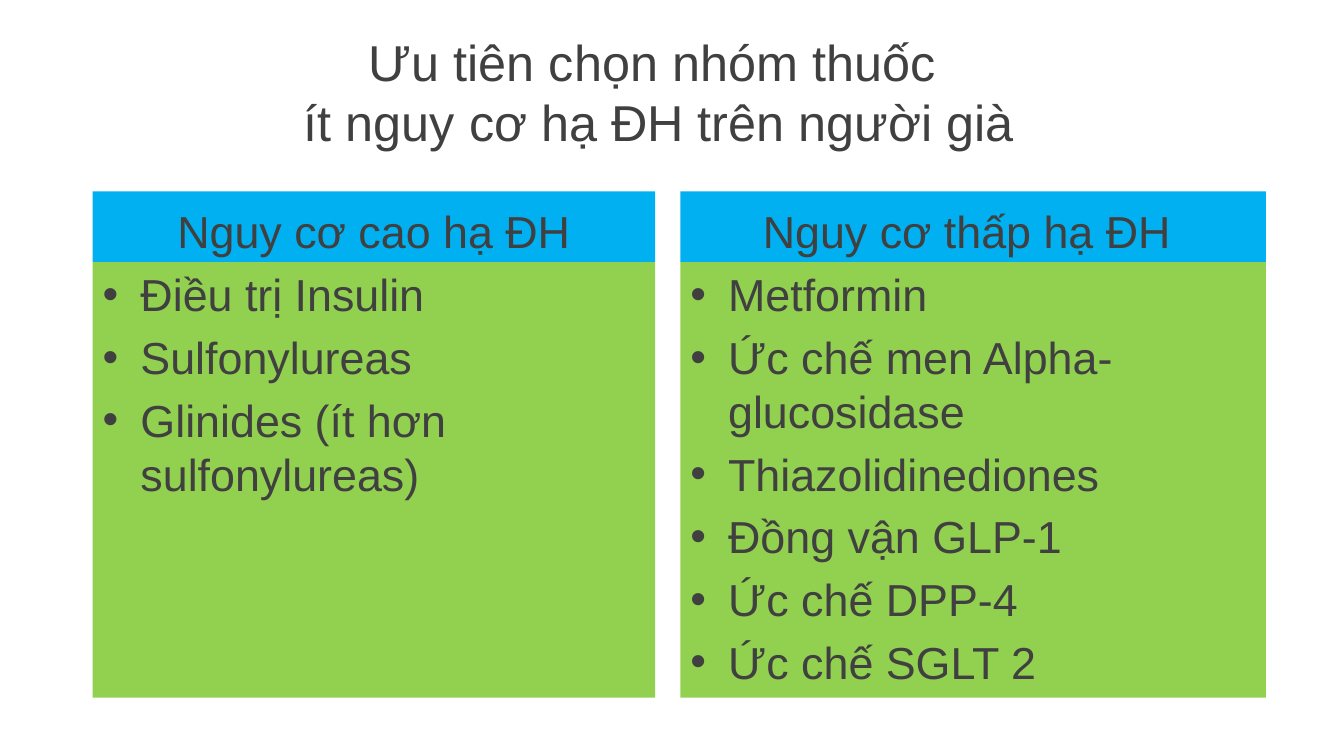
from dataclasses import dataclass

import pptx
import pptx.dml.color
import pptx.enum.shapes
import pptx.enum.text
import pptx.oxml
import pptx.oxml.ns
import pptx.util

Pt = pptx.util.Pt
ALIGN = pptx.enum.text.PP_ALIGN
ANCHOR = pptx.enum.text.MSO_ANCHOR

COLORS = {"text": "404040", "heading": "00B0F0", "list": "92D050"}
FONT = "Arial"
HEADING_TOP, HEADING_HEIGHT = 136.8, 50.4
LIST_HEIGHT = 311.04
BULLET_INDENT = 27


@dataclass
class RiskGroup:
    left: float
    width: float
    heading: str
    drugs: list[str]


RISK_GROUPS = [
    RiskGroup(66.24, 401.76, "Nguy cơ cao hạ ĐH",
              ["Điều trị Insulin", "Sulfonylureas", "Glinides (ít hơn sulfonylureas)"]),
    RiskGroup(486, 418.32, "Nguy cơ thấp hạ ĐH ",
              ["Metformin", "Ức chế men Alpha-glucosidase", "Thiazolidinediones",
               "Đồng vận GLP-1", "Ức chế DPP-4", "Ức chế SGLT 2"]),
]


def add_bullet(paragraph) -> None:
    properties = paragraph._p.get_or_add_pPr()
    properties.set("marL", str(Pt(BULLET_INDENT)))
    properties.set("indent", str(-Pt(BULLET_INDENT)))
    properties.append(pptx.oxml.parse_xml(
        f'<a:buFont {pptx.oxml.ns.nsdecls("a")} typeface="{FONT}"/>'))
    properties.append(pptx.oxml.parse_xml(
        f'<a:buChar {pptx.oxml.ns.nsdecls("a")} char="•"/>'))


def write_text(shape, lines: list[str], *, size: float = 32, align=ALIGN.CENTER,
               anchor=ANCHOR.MIDDLE, space_before: float = 0, bullets: bool = False) -> None:
    frame = shape.text_frame
    frame.word_wrap = True
    frame.vertical_anchor = anchor
    for index, line in enumerate(lines):
        paragraph = frame.add_paragraph() if index else frame.paragraphs[0]
        paragraph.text = line
        paragraph.alignment = align
        paragraph.space_before = Pt(space_before)
        if bullets:
            add_bullet(paragraph)
        for run in paragraph.runs:
            run.font.name = FONT
            run.font.size = Pt(size)
            run.font.color.rgb = pptx.dml.color.RGBColor.from_string(COLORS["text"])


def add_panel(slide, left: float, top: float, width: float, height: float, color: str):
    panel = slide.shapes.add_shape(pptx.enum.shapes.MSO_SHAPE.RECTANGLE,
                                   Pt(left), Pt(top), Pt(width), Pt(height))
    panel.shadow.inherit = False
    panel.fill.solid()
    panel.fill.fore_color.rgb = pptx.dml.color.RGBColor.from_string(COLORS[color])
    panel.line.fill.background()
    return panel


def add_risk_group(slide, group: RiskGroup) -> None:
    heading = add_panel(slide, group.left, HEADING_TOP, group.width, HEADING_HEIGHT, "heading")
    write_text(heading, [group.heading], anchor=ANCHOR.BOTTOM, space_before=6.4)
    drug_list = add_panel(slide, group.left, HEADING_TOP + HEADING_HEIGHT,
                          group.width, LIST_HEIGHT, "list")
    write_text(drug_list, group.drugs, align=ALIGN.LEFT, anchor=ANCHOR.TOP,
               space_before=6.4, bullets=True)


def main() -> None:
    presentation = pptx.Presentation()
    presentation.slide_width, presentation.slide_height = Pt(960), Pt(540)
    slide = presentation.slides.add_slide(presentation.slide_layouts[6])

    # Title
    title = slide.shapes.add_textbox(Pt(56.88), Pt(12.96), Pt(828), Pt(104.4))
    write_text(title, ["Ưu tiên chọn nhóm thuốc \vít nguy cơ hạ ĐH trên người già"], size=36)

    # High-risk and low-risk columns
    for group in RISK_GROUPS:
        add_risk_group(slide, group)

    presentation.save("out.pptx")


if __name__ == "__main__":
    main()
